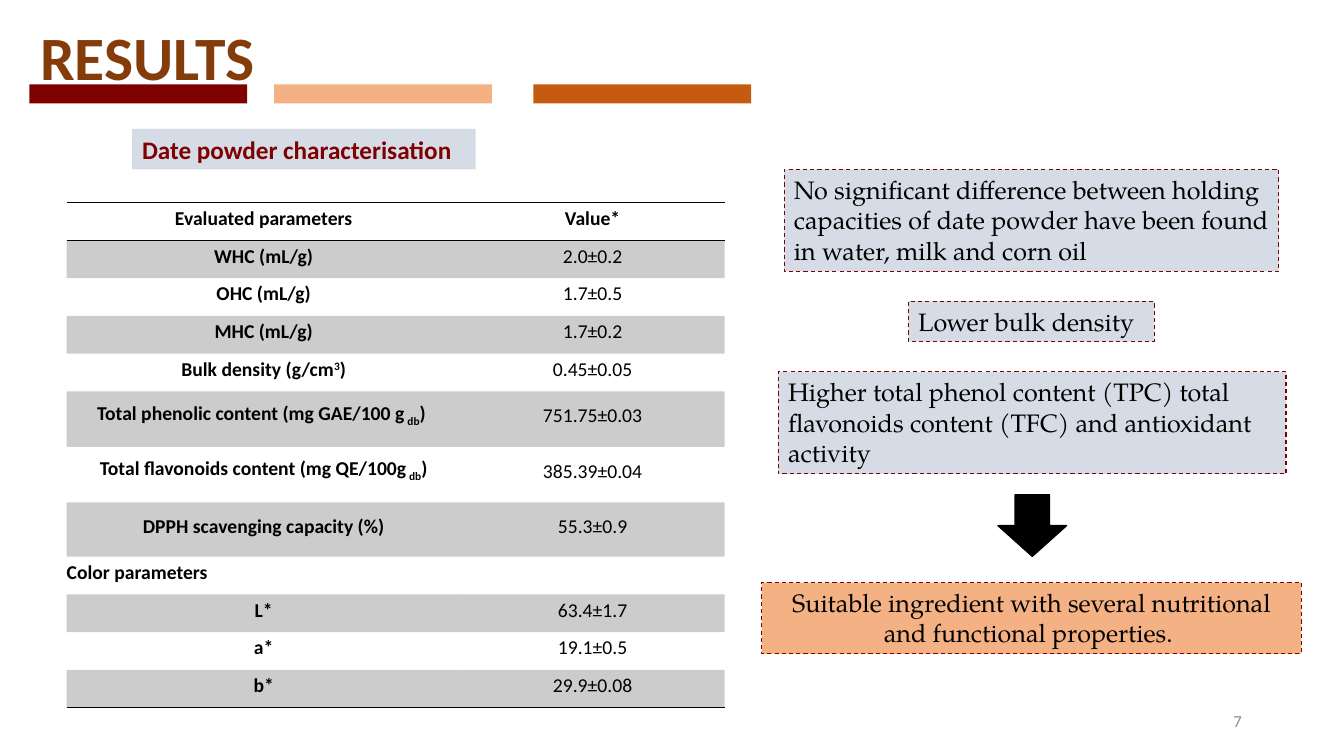
from dataclasses import dataclass
from lxml import etree
from pptx import Presentation
from pptx.dml.color import RGBColor
from pptx.enum.dml import MSO_LINE
from pptx.enum.shapes import MSO_SHAPE
from pptx.enum.text import MSO_ANCHOR, MSO_AUTO_SIZE, PP_ALIGN
from pptx.oxml import parse_xml
from pptx.oxml.ns import nsdecls, qn
from pptx.util import Cm, Pt

RECT, ARROW = MSO_SHAPE.RECTANGLE, MSO_SHAPE.DOWN_ARROW
LEFT, CENTER, RIGHT = PP_ALIGN.LEFT, PP_ALIGN.CENTER, PP_ALIGN.RIGHT
TOP, MIDDLE = MSO_ANCHOR.TOP, MSO_ANCHOR.MIDDLE
DASH, FIXED = MSO_LINE.DASH, MSO_AUTO_SIZE.NONE
PLAIN = "{2D5ABB26-0587-4C30-8999-92F81FD0307C}"  # table style without grid


@dataclass(frozen=True)
class Theme:
    sans: str = "Calibri"
    serif: str = "TeX Gyre Pagella"
    black: str = "000000"
    grey: str = "8C8C8C"
    brown: str = "843C0B"
    wine: str = "7E0000"
    rust: str = "C55A11"
    peach: str = "F4B183"
    mist: str = "D6DCE5"
    title: int = 44
    note: int = 18
    cell: int = 14
    small: int = 12
    lead: int = 13  # line pitch of table text


def apply(item, values):
    for key, value in values.items():
        setattr(item, key, value)


class Page:
    def __init__(self, slide, theme):
        self.slide, self.theme = slide, theme
        self.shapes = slide.shapes

    def put_text(self, frame, parts, size, color, bold=False, face=None,
                 align=LEFT, anchor=TOP, lead=None):
        """Parts is a string or a list of (text, baseline percent)."""
        apply(frame, {"word_wrap": True, "vertical_anchor": anchor})
        para = frame.paragraphs[0]
        apply(para, {"alignment": align, "line_spacing": lead})
        for text, base in [(parts, 0)] if isinstance(parts, str) else parts:
            run = para.add_run()
            run.text = text
            apply(run.font, {"size": Pt(size), "bold": bold,
                             "name": face or self.theme.sans})
            run.font.color.rgb = RGBColor.from_string(color)
            if base:
                run.font._element.set("baseline", str(base * 1000))

    def title(self, text, box):
        head = self.shapes.title
        apply(head, dict(zip(("left", "top", "width", "height"), map(Cm, box))))
        head.text_frame.auto_size = FIXED
        self.put_text(head.text_frame, text, self.theme.title, self.theme.brown, True)

    def label(self, text, box, **form):
        self.put_text(self.shapes.add_textbox(*map(Cm, box)).text_frame, text, **form)

    def shape(self, kind, box, fill, line=None, width=0.75, dash=None):
        item = self.shapes.add_shape(kind, *map(Cm, box))
        item.shadow.inherit = False
        item.fill.solid()
        item.fill.fore_color.rgb = RGBColor.from_string(fill)
        if line:
            item.line.color.rgb = RGBColor.from_string(line)
            apply(item.line, {"width": Pt(width), "dash_style": dash})
        else:
            item.line.fill.background()
        return item

    def note(self, text, box, fill, align=LEFT):
        item = self.shape(RECT, box, fill, self.theme.wine, dash=DASH)
        self.put_text(item.text_frame, text, self.theme.note, self.theme.black,
                      face=self.theme.serif, align=align)

    def rule(self, cell, sides):
        props = cell._tc.get_or_add_tcPr()
        for spot, side in enumerate(sides):
            props.insert(spot, parse_xml(
                f'<a:ln{side} {nsdecls("a")} w="12700"><a:solidFill>'
                f'<a:srgbClr val="{self.theme.black}"/></a:solidFill></a:ln{side}>'))

    def shade(self, cell, dark):
        if not dark:
            cell.fill.background()
            return
        cell.fill.solid()
        cell.fill.fore_color.rgb = RGBColor.from_string(self.theme.black)
        tint = cell._tc.tcPr.find(".//" + qn("a:srgbClr"))
        etree.SubElement(tint, qn("a:alpha")).set("val", "20000")

    def table(self, rows, spot, widths, heights):
        frame = self.shapes.add_table(len(rows), len(widths), *map(
            Cm, (*spot, sum(widths), sum(heights))))
        grid = frame.table
        apply(grid, {"first_row": False, "horz_banding": False})
        grid._tbl.tblPr.find(qn("a:tableStyleId")).text = PLAIN
        for col, width in zip(grid.columns, widths):
            col.width = Cm(width)
        last = len(rows) - 1
        for r, (row, high) in enumerate(zip(rows, heights)):
            grid.rows[r].height = Cm(high)
            whole = len(row) == 1
            if whole:
                grid.cell(r, 0).merge(grid.cell(r, len(widths) - 1))
            for c, parts in enumerate(row):
                cell = grid.cell(r, c)
                apply(cell, {f"margin_{side}": 0 for side in
                             ("left", "right", "top", "bottom")})
                self.put_text(cell.text_frame, parts, self.theme.cell,
                              self.theme.black, bold=c == 0 or r == 0,
                              align=LEFT if whole else CENTER,
                              lead=Pt(self.theme.lead))
                cell.vertical_anchor = MIDDLE
                self.shade(cell, r % 2 == 1)
                self.rule(cell, {0: "TB", last: "B"}.get(r, ""))


ROWS = [
    ("Evaluated parameters", "Value*"),
    ("WHC (mL/g)", "2.0±0.2"),
    ("OHC (mL/g)", "1.7±0.5"),
    ("MHC (mL/g)", "1.7±0.2"),
    ([("Bulk density (g/cm", 0), ("3", 30), (")", 0)], "0.45±0.05"),
    ([("Total phenolic content (mg GAE/100 g", 0), (" db", -25), (") ", 0)],
     "751.75±0.03"),
    ([("Total flavonoids content (mg QE/100g", 0), (" db", -25), (")", 0)],
     "385.39±0.04"),
    ("DPPH scavenging capacity (%)", "55.3±0.9"),
    ("Color parameters",),
    ("L*", "63.4±1.7"),
    ("a*", "19.1±0.5"),
    ("b*", "29.9±0.08"),
]


def main():
    deck = Presentation()
    apply(deck, {"slide_width": Cm(33.87), "slide_height": Cm(19.05)})
    theme = Theme()
    page = Page(deck.slides.add_slide(deck.slide_layouts[5]), theme)

    # Header with three bars
    page.label("7", (23.93, 17.65, 7.62, 1.02), size=theme.small,
               color=theme.grey, align=RIGHT, anchor=MIDDLE)
    page.title("RESULTS", (0.76, 0.36, 5.97, 2.13))
    for left, fill in ((0.74, theme.wine), (6.91, theme.peach), (13.44, theme.rust)):
        page.shape(RECT, (left, 2.13, 5.49, 0.48), fill)

    # Table of measured values
    page.table(ROWS, (1.68, 5.11), (9.93, 6.65),
               [0.95] * 5 + [1.4, 1.4, 1.37] + [0.95] * 4)
    head = page.shape(RECT, (3.33, 3.25, 8.66, 1.02), theme.mist)
    page.put_text(head.text_frame, "Date powder characterisation",
                  theme.note, theme.wine, True)

    # Findings and conclusion
    page.note("No significant difference between holding capacities of date "
              "powder have been found in water, milk and corn oil",
              (19.76, 4.27, 12.47, 2.57), theme.mist)
    page.note("Lower bulk density", (22.89, 7.59, 6.2, 1.02), theme.mist)
    page.note("Higher total phenol content (TPC) total flavonoids content (TFC) "
              "and antioxidant activity", (19.61, 9.37, 12.8, 2.57), theme.mist)
    page.shape(ARROW, (25.15, 12.47, 1.73, 1.55), theme.black, theme.black, 1)
    page.note("Suitable ingredient with several nutritional and functional "
              "properties. ", (19.2, 14.68, 13.59, 1.8), theme.peach, CENTER)

    deck.save("out.pptx")


if __name__ == "__main__":
    main()
